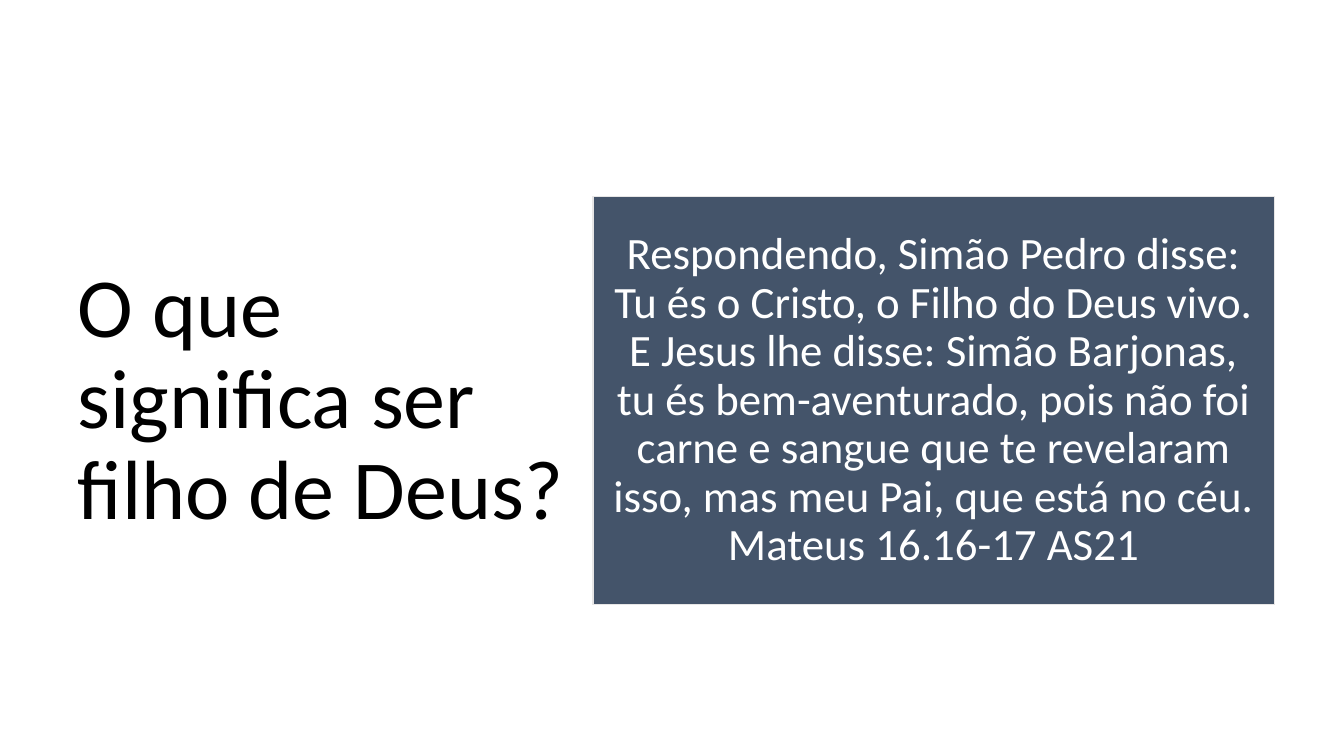
from dataclasses import dataclass

from pptx import Presentation
from pptx.dml.color import RGBColor
from pptx.enum.shapes import MSO_SHAPE
from pptx.enum.text import MSO_ANCHOR, MSO_AUTO_SIZE, PP_ALIGN
from pptx.util import Pt

PX = 9144  # EMU per px, 100 px to the inch


@dataclass(frozen=True)
class Theme:
    font: str = "Calibri"
    ink: str = "000000"
    paper: str = "FFFFFF"
    panel: str = "44546A"
    edge: str = "E7E6E6"
    title_size: int = 60
    verse_size: int = 32


theme = Theme()


def place(box, left, top, width, height):
    box.left, box.top = left * PX, top * PX
    box.width, box.height = width * PX, height * PX


def write(box, text, *, size, color, align, inset_x, inset_y):
    frame = box.text_frame
    frame.word_wrap = True
    frame.auto_size = MSO_AUTO_SIZE.NONE
    frame.vertical_anchor = MSO_ANCHOR.MIDDLE
    frame.margin_left = frame.margin_right = inset_x * PX
    frame.margin_top = frame.margin_bottom = inset_y * PX
    para = frame.paragraphs[0]
    para.alignment = align
    para.line_spacing = 0.9
    span = para.add_run()
    span.text = text
    span.font.name = theme.font
    span.font.size = Pt(size)
    span.font.color.rgb = RGBColor.from_string(color)


deck = Presentation()
deck.slide_width, deck.slide_height = 1333 * PX, 750 * PX
page = deck.slides.add_slide(deck.slide_layouts[5])
page.background.fill.solid()
page.background.fill.fore_color.rgb = RGBColor.from_string(theme.paper)

title = page.shapes.title
place(title, 67, 137, 504, 522)
write(title, "O que significa ser filho de Deus?", size=theme.title_size,
      color=theme.ink, align=PP_ALIGN.LEFT, inset_x=10, inset_y=5)

verse = page.shapes.add_shape(MSO_SHAPE.RECTANGLE, 0, 0, PX, PX)
place(verse, 588, 195, 676, 405)
verse.shadow.inherit = False
verse.fill.solid()
verse.fill.fore_color.rgb = RGBColor.from_string(theme.panel)
verse.line.color.rgb = RGBColor.from_string(theme.edge)
verse.line.width = Pt(1)
write(verse,
      "Respondendo, Simão Pedro disse: Tu és o Cristo, o Filho do Deus vivo. "
      "E Jesus lhe disse: Simão Barjonas, tu és bem-aventurado, pois não foi "
      "carne e sangue que te revelaram isso, mas meu Pai, que está no céu. "
      "Mateus 16.16-17 AS21",
      size=theme.verse_size, color=theme.paper, align=PP_ALIGN.CENTER,
      inset_x=13, inset_y=13)

deck.save("out.pptx")
